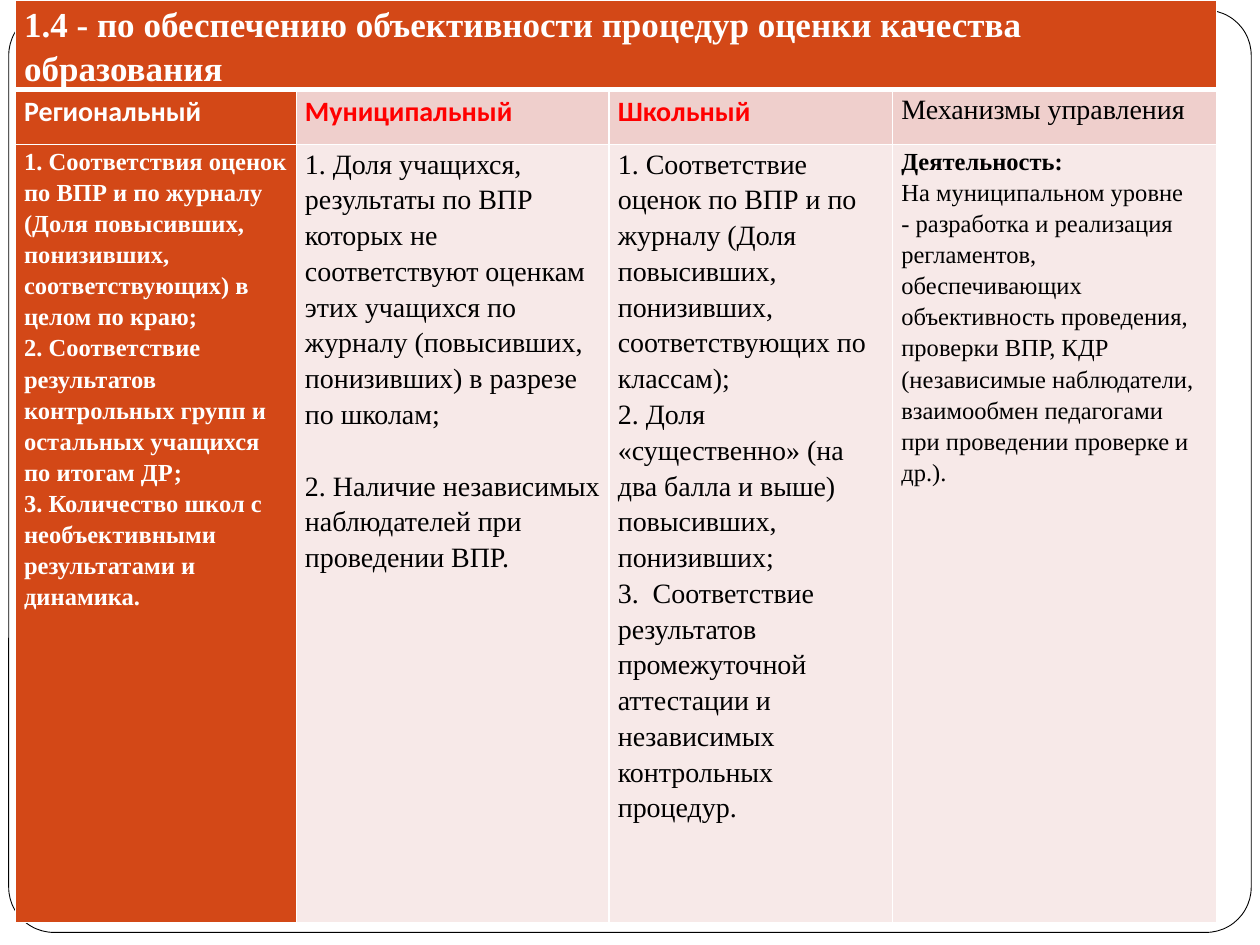
from dataclasses import dataclass

from lxml import etree
from pptx import Presentation
from pptx.dml.color import RGBColor
from pptx.enum.shapes import MSO_SHAPE
from pptx.oxml.ns import qn
from pptx.util import Pt

ROUNDED = MSO_SHAPE.ROUNDED_RECTANGLE
SERIF, SANS = "Times New Roman", "Calibri"
WHITE, BLACK, RED = "FFFFFF", "000000", "FF0000"
ORANGE, PINK, PALE = "D34817", "EFCFCC", "F7E9E8"
COLUMN_WIDTHS = (160.5, 178.8, 162, 185)
ROW_HEIGHTS = (50, 31.5, 444.5)
LINE_SPACING = 1.15
ITEM_GAP = 20.5


@dataclass
class Entry:
    text: str
    size: float = 16
    color: str = BLACK
    bold: bool = False
    font: str = SERIF
    before: float = 0


@dataclass
class TableCell:
    fill: str
    entries: list[Entry]


def rgb(value: str) -> RGBColor:
    return RGBColor.from_string(value)


def set_borders(cell, widths: dict[str, float]) -> None:
    """Add white borders, given as side letter to width."""
    properties = cell._tc.get_or_add_tcPr()
    for side, width in widths.items():
        line = etree.SubElement(properties, qn(f"a:ln{side}"), w=str(Pt(width)))
        solid = etree.SubElement(line, qn("a:solidFill"))
        etree.SubElement(solid, qn("a:srgbClr"), val=WHITE)


def fill_cell(cell, content: TableCell, top: float, bottom: float) -> None:
    set_borders(cell, {"L": 1, "R": 1, "T": top, "B": bottom})
    cell.fill.solid()
    cell.fill.fore_color.rgb = rgb(content.fill)
    cell.margin_left = cell.margin_right = Pt(5)
    cell.margin_top = cell.margin_bottom = 0
    frame = cell.text_frame
    frame.text = "\n".join(entry.text for entry in content.entries)
    for paragraph, entry in zip(frame.paragraphs, content.entries):
        paragraph.line_spacing = LINE_SPACING
        paragraph.space_before = Pt(entry.before)
        font = paragraph.runs[0].font
        font.name, font.size, font.bold = entry.font, Pt(entry.size), entry.bold
        font.color.rgb = rgb(entry.color)


TITLE = TableCell(ORANGE, [
    Entry("1.4 - по обеспечению объективности процедур оценки качества образования",
          20, WHITE, True),
])
HEADINGS = [
    TableCell(ORANGE, [Entry("Региональный", 16, WHITE, True, SANS)]),
    TableCell(PINK, [Entry("Муниципальный", 16, RED, True, SANS)]),
    TableCell(PINK, [Entry("Школьный", 16, RED, True, SANS)]),
    TableCell(PINK, [Entry("Механизмы управления")]),
]
REGIONAL = (
    "1. Соответствия оценок по ВПР и по журналу (Доля повысивших, понизивших, "
    "соответствующих) в целом по краю;",
    "2. Соответствие результатов контрольных групп и остальных учащихся по итогам ДР;",
    "3. Количество школ с необъективными результатами и динамика.",
)
SCHOOL = (
    "1. Соответствие оценок по ВПР и по журналу (Доля повысивших, понизивших, "
    "соответствующих по классам);",
    "2. Доля «существенно» (на два балла и выше) повысивших, понизивших;",
    "3.  Соответствие результатов промежуточной аттестации и независимых "
    "контрольных процедур.",
)
DETAILS = [
    TableCell(ORANGE, [Entry(text, 14, WHITE, True) for text in REGIONAL]),
    TableCell(PALE, [
        Entry("1. Доля учащихся, результаты по ВПР которых не соответствуют оценкам "
              "этих учащихся по журналу (повысивших, понизивших) в разрезе по школам;"),
        Entry("2. Наличие независимых наблюдателей при проведении ВПР.",
              before=ITEM_GAP),
    ]),
    TableCell(PALE, [Entry(text) for text in SCHOOL]),
    TableCell(PALE, [
        Entry("Деятельность:", 14, bold=True),
        Entry("На муниципальном уровне", 14),
        Entry("- разработка и реализация регламентов, обеспечивающих объективность "
              "проведения, проверки ВПР, КДР (независимые наблюдатели, взаимообмен "
              "педагогами при проведении проверке и др.).", 14),
    ]),
]


def add_frame(slide) -> None:
    frame = slide.shapes.add_shape(ROUNDED, Pt(5), Pt(5.8), Pt(710), Pt(527))
    frame.adjustments[0] = 0.049
    frame.shadow.inherit = False
    frame.fill.solid()
    frame.fill.fore_color.rgb = rgb(WHITE)
    frame.line.color.rgb = rgb(BLACK)
    frame.line.width = Pt(0.5)


def add_indicators(slide) -> None:
    table = slide.shapes.add_table(
        len(ROW_HEIGHTS), len(COLUMN_WIDTHS), Pt(8.8), 0,
        Pt(sum(COLUMN_WIDTHS)), Pt(sum(ROW_HEIGHTS))).table
    for column, width in zip(table.columns, COLUMN_WIDTHS):
        column.width = Pt(width)
    for row, height in zip(table.rows, ROW_HEIGHTS):
        row.height = Pt(height)

    # Title across all columns, with a thick rule below
    table.cell(0, 0).merge(table.cell(0, len(COLUMN_WIDTHS) - 1))
    fill_cell(table.cell(0, 0), TITLE, 1, 3)

    # Level headings and their indicators
    for index, (heading, detail) in enumerate(zip(HEADINGS, DETAILS)):
        fill_cell(table.cell(1, index), heading, 3, 1)
        fill_cell(table.cell(2, index), detail, 1, 1)


def main() -> None:
    presentation = Presentation()
    presentation.slide_width, presentation.slide_height = Pt(720), Pt(540)
    slide = presentation.slides.add_slide(presentation.slide_layouts[6])
    add_frame(slide)
    add_indicators(slide)
    presentation.save("out.pptx")


if __name__ == "__main__":
    main()
